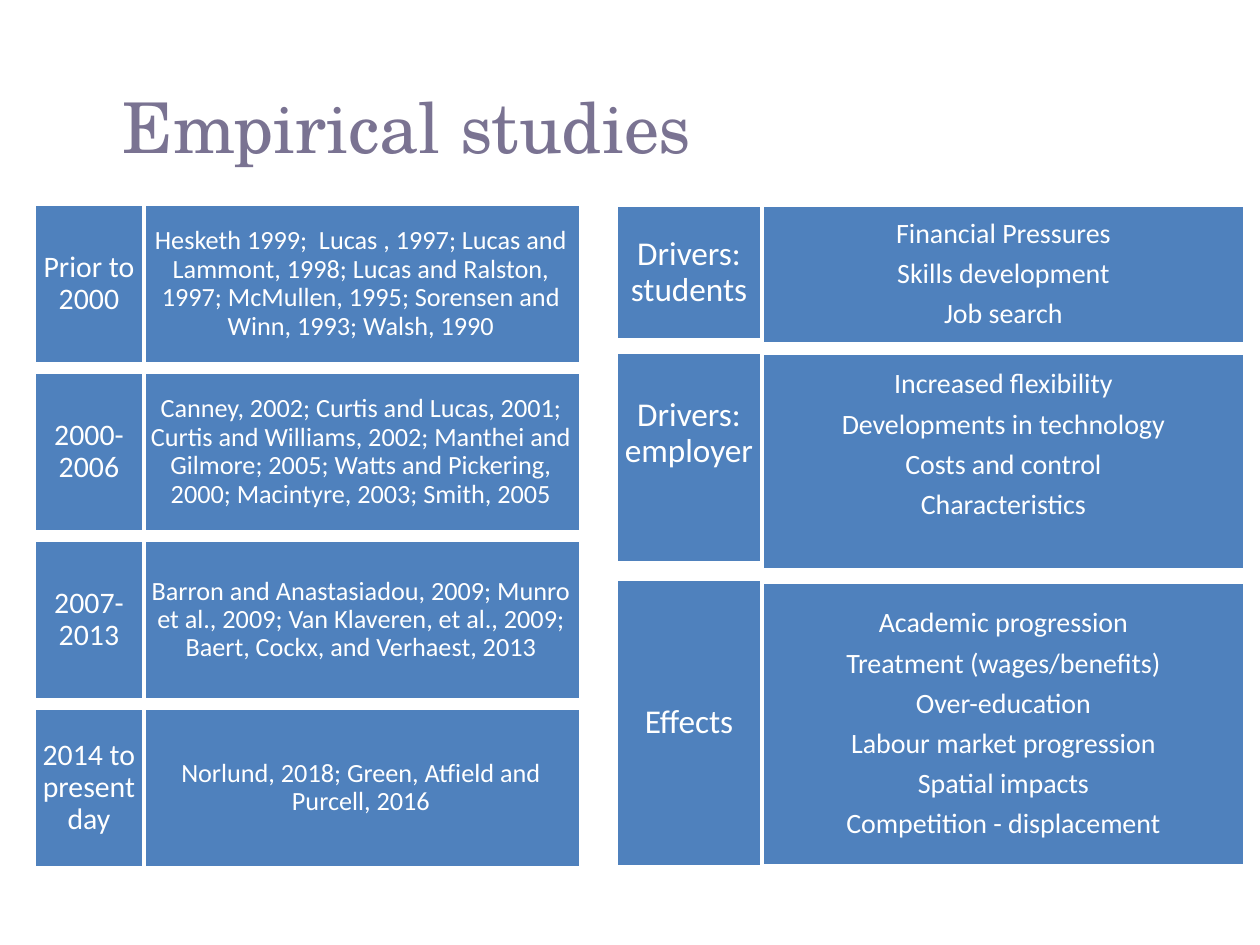
from pptx import Presentation
from pptx.dml.color import RGBColor
from pptx.enum.shapes import MSO_SHAPE
from pptx.enum.text import MSO_ANCHOR, MSO_AUTO_SIZE, PP_ALIGN
from pptx.util import Emu, Pt

PX = 914400 // 126
WHITE = RGBColor(0xFF, 0xFF, 0xFF)
BLUE = RGBColor(0x4F, 0x81, 0xBD)
PURPLE = RGBColor(0x7A, 0x73, 0x92)

ROW_TOP, ROW_PITCH, ROW_HEIGHT = 204, 168, 160

# Period, studies
STUDIES = [
    ("Prior to 2000",
     "Hesketh 1999;  Lucas , 1997; Lucas and Lammont, 1998; Lucas and Ralston, "
     "1997; McMullen, 1995; Sorensen and Winn, 1993; Walsh, 1990"),
    ("2000-2006",
     "Canney, 2002; Curtis and Lucas, 2001; Curtis and Williams, 2002; Manthei and "
     "Gilmore; 2005; Watts and Pickering, 2000; Macintyre, 2003; Smith, 2005"),
    ("2007-2013",
     "Barron and Anastasiadou, 2009; Munro et al., 2009; Van Klaveren, et al., 2009; "
     "Baert, Cockx, and Verhaest, 2013"),
    ("2014 to present day", "Norlund, 2018; Green, Atfield and Purcell, 2016"),
]

# Theme, (top, height, extra bottom inset) of its label and of its points, points
THEMES = [
    ("Drivers: students", (205, 135, 0), (205, 139, 0),
     ["Financial Pressures", "Skills development", "Job search"]),
    ("Drivers: employer", (352, 211, 48), (353, 217, 33),
     ["Increased flexibility", "Developments in technology",
      "Costs and control", "Characteristics"]),
    ("Effects", (579, 288, 0), (582, 284, 0),
     ["Academic progression", "Treatment (wages/benefits)", "Over-education",
      "Labour market progression", "Spatial impacts", "Competition - displacement"]),
]


class SlideBuilder:
    title_font = "TeX Gyre Schola"
    body_font = "Calibri"

    def __init__(self, deck):
        self.page = deck.slides.add_slide(deck.slide_layouts[5])

    def add_span(self, para, text, font, size, color):
        span = para.add_run()
        span.text = text
        span.font.name = font
        span.font.size = Pt(size)
        span.font.color.rgb = color

    def set_frame(self, frame, anchor, inset, extra_bottom=0):
        frame.word_wrap = True
        frame.auto_size = MSO_AUTO_SIZE.NONE
        frame.vertical_anchor = anchor
        frame.margin_left = frame.margin_right = frame.margin_top = Emu(inset * PX)
        frame.margin_bottom = Emu((inset + extra_bottom) * PX)

    def title(self, text, left, top, width, height):
        box = self.page.shapes.title
        box.left, box.top, box.width, box.height = (
            Emu(value * PX) for value in (left, top, width, height))
        self.set_frame(box.text_frame, MSO_ANCHOR.TOP, 0)
        para = box.text_frame.paragraphs[0]
        para.alignment = PP_ALIGN.LEFT
        para.line_spacing = Pt(42)
        self.add_span(para, text, self.title_font, 40, PURPLE)

    def panel(self, lines, left, top, width, height, size, inset, extra_bottom=0):
        box = self.page.shapes.add_shape(
            MSO_SHAPE.RECTANGLE,
            *(Emu(value * PX) for value in (left, top, width, height)))
        box.shadow.inherit = False
        box.fill.solid()
        box.fill.fore_color.rgb = BLUE
        box.line.color.rgb = WHITE
        box.line.width = Pt(2)
        frame = box.text_frame
        self.set_frame(frame, MSO_ANCHOR.MIDDLE, inset, extra_bottom)
        for index, line in enumerate(lines):
            para = frame.add_paragraph() if index else frame.paragraphs[0]
            para.alignment = PP_ALIGN.CENTER
            para.line_spacing = 0.9
            para.space_after = Pt(round(size * 0.35, 1))
            self.add_span(para, line, self.body_font, size, WHITE)


def main():
    deck = Presentation()
    deck.slide_width, deck.slide_height = Emu(1260 * PX), Emu(945 * PX)
    slide = SlideBuilder(deck)
    slide.title("Empirical studies", 123, 94, 898, 90)

    # Studies by period
    for row, (period, studies) in enumerate(STUDIES):
        top = ROW_TOP + row * ROW_PITCH
        slide.panel([studies], 141, top, 440, ROW_HEIGHT, 15, 5)
        slide.panel([period], 34, top, 110, ROW_HEIGHT, 17, 6)

    # Drivers and effects
    for theme, label_rows, point_rows, points in THEMES:
        top, height, extra = point_rows
        slide.panel(points, 762, top, 483, height, 16, 5, extra)
        top, height, extra = label_rows
        slide.panel([theme], 616, top, 146, height, 19, 6, extra)

    deck.save("out.pptx")


if __name__ == "__main__":
    main()
